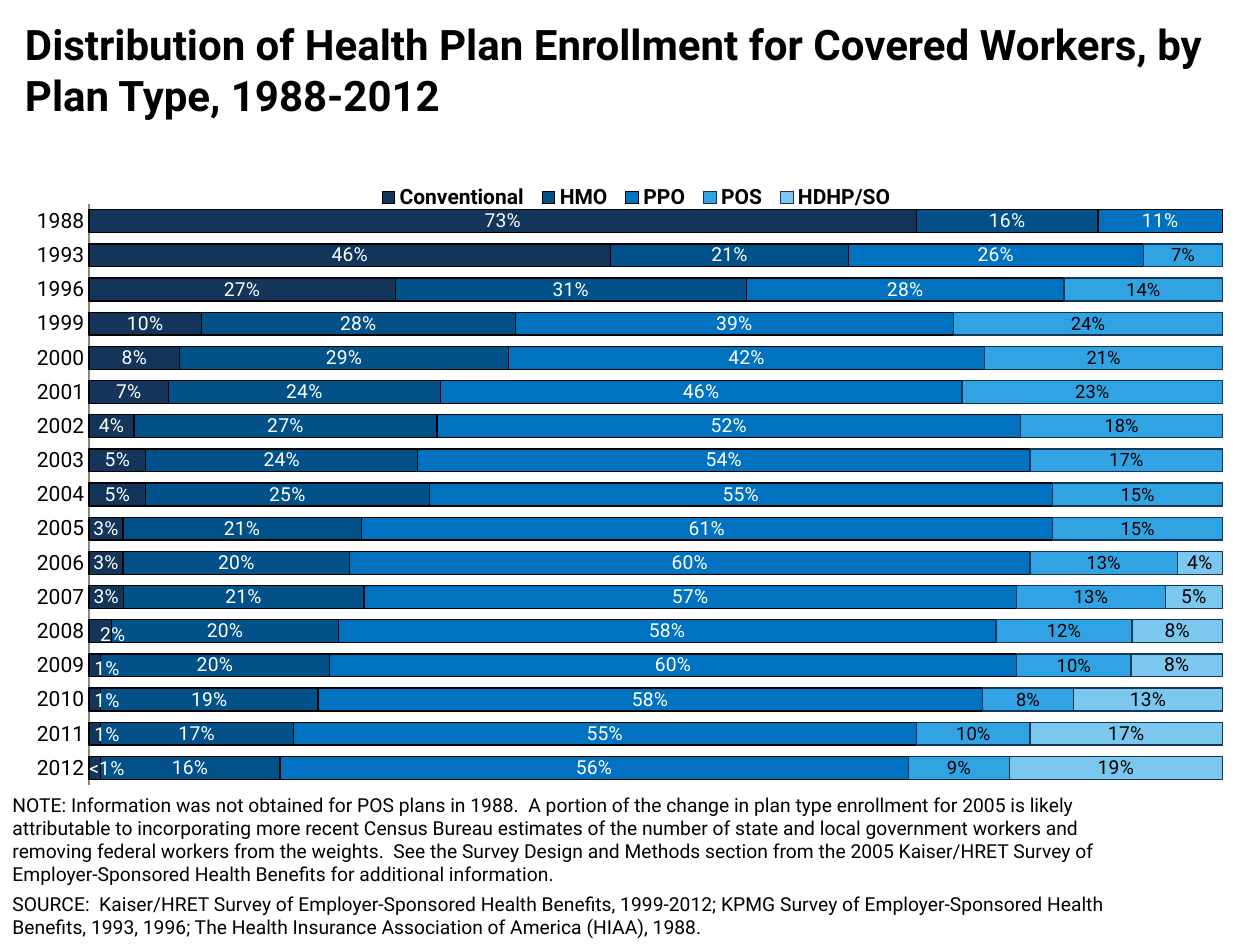
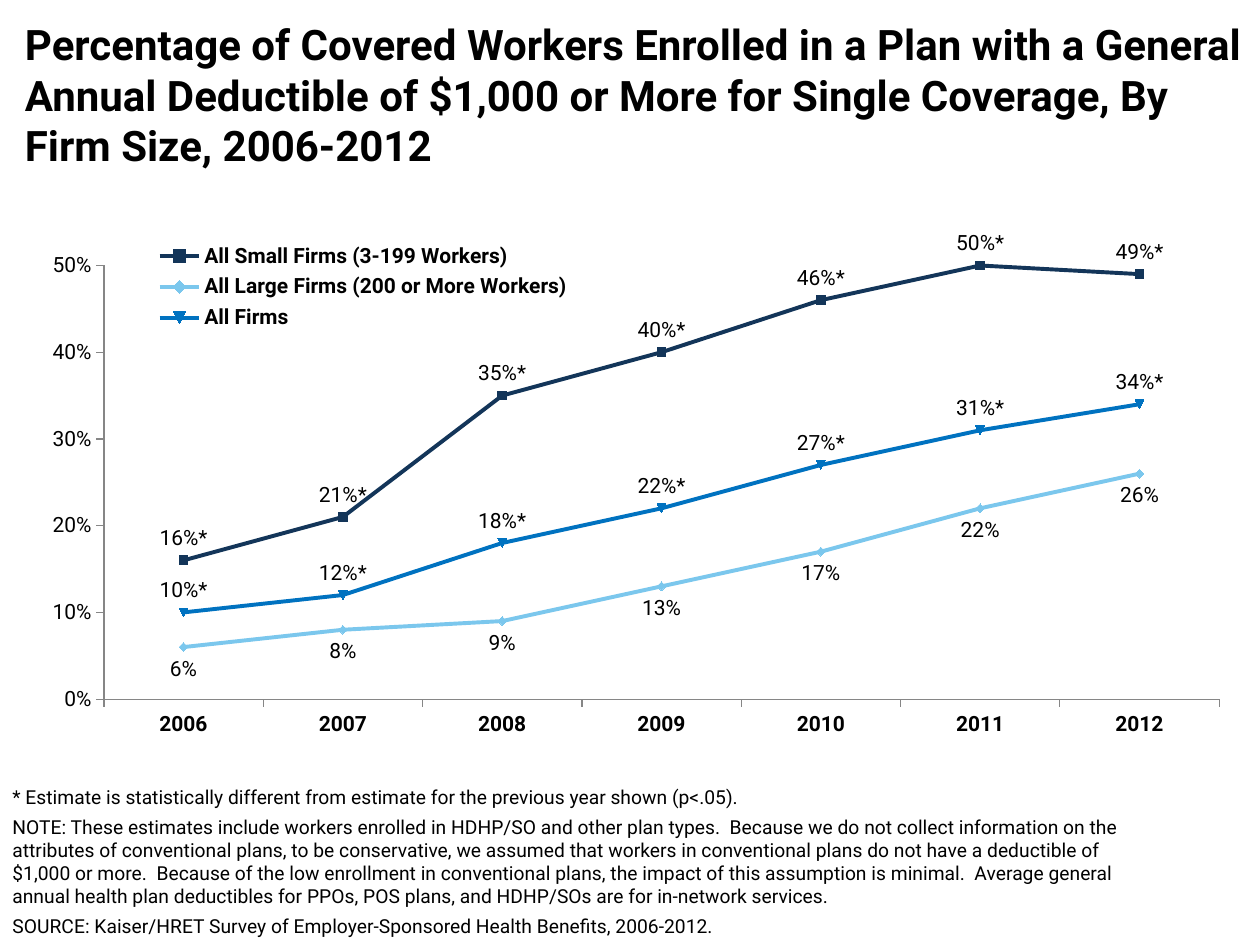
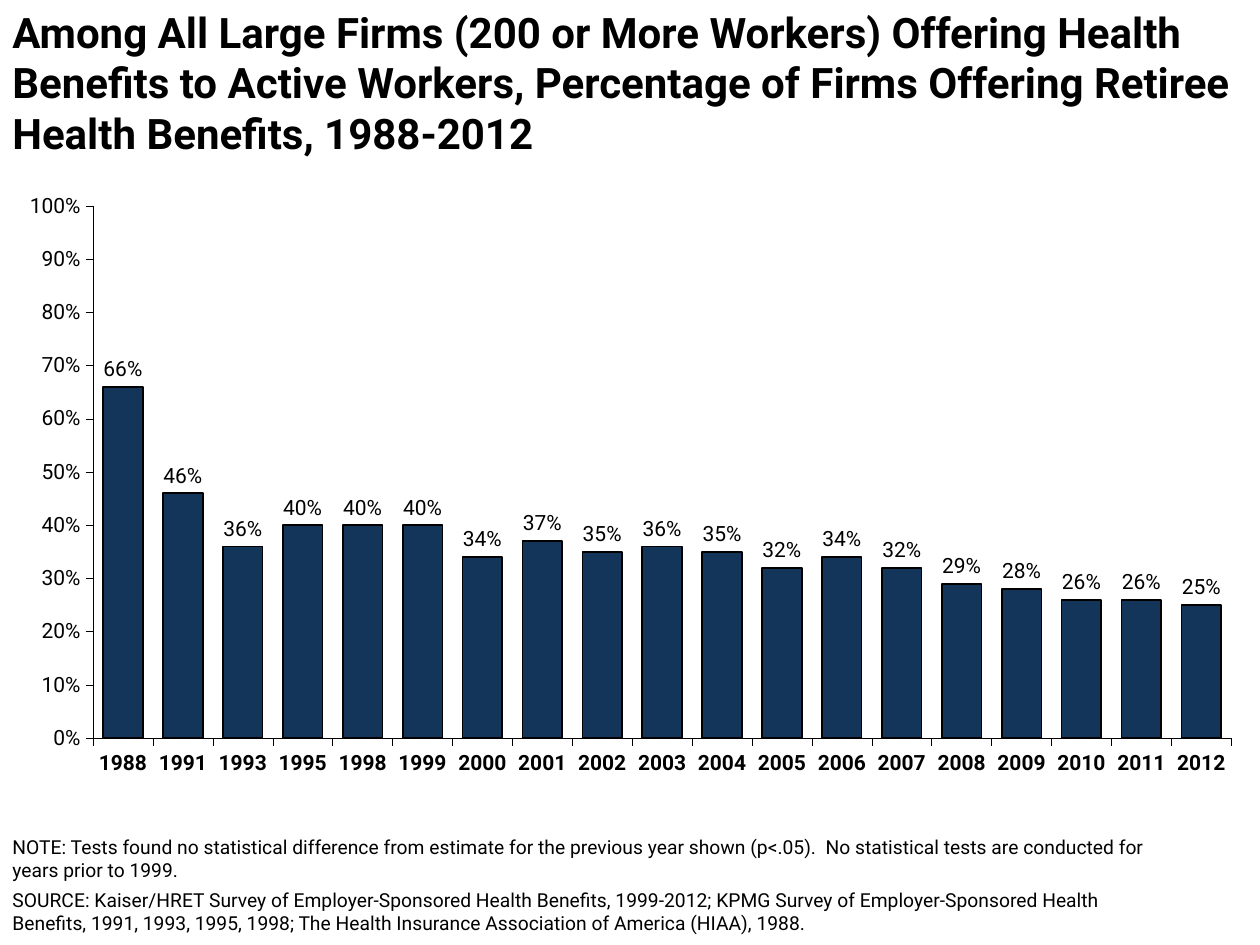
from pptx import Presentation
from pptx import util as u
from pptx.chart import data as chart_data
from pptx.dml import color
from pptx.enum import chart as ch, text
from pptx.oxml import parse_xml
from pptx.oxml import ns

COLORS = {"black": "000000", "white": "FFFFFF", "navy": "133559", "deep": "025189",
          "blue": "0072C0", "sky": "31A3E3", "pale": "7BC7ED", "axis": "868686"}
FONT = "Roboto"
PERCENT = "0%"
STARRED = '0%"*"'
INSIDE = {"layoutTarget": "inner", "xMode": "edge", "yMode": "edge"}
EDGE = {"xMode": "edge", "yMode": "edge"}

PLAN_YEARS = ["2012", "2011", "2010", "2009", "2008", "2007", "2006", "2005", "2004",
              "2003", "2002", "2001", "2000", "1999", "1996", "1993", "1988"]
PLANS = [
    ("Conventional", "navy", "black", "white", 11,
     [1, 1, 1, 1, 2, 3, 3, 3, 5, 5, 4, 7, 8, 10, 27, 46, 73]),
    ("HMO", "deep", "black", "white", 11,
     [16, 17, 19, 20, 20, 21, 20, 21, 25, 24, 27, 24, 29, 28, 31, 21, 16]),
    ("PPO", "blue", "black", "white", 11,
     [56, 55, 58, 60, 58, 57, 60, 61, 55, 54, 52, 46, 42, 39, 28, 26, 11]),
    ("POS", "sky", "navy", "black", 10.5,
     [9, 10, 8, 10, 12, 13, 13, 15, 15, 17, 18, 23, 21, 24, 14, 7, None]),
    ("HDHP/SO", "pale", "navy", "black", 11,
     [19, 17, 13, 8, 8, 5, 4] + [None] * 10),
]
DEDUCTIBLE_YEARS = ["2006", "2007", "2008", "2009", "2010", "2011", "2012"]
FIRM_SIZES = [
    ("All Small Firms (3-199 Workers)", "navy", STARRED, "ABOVE",
     [16, 21, 35, 40, 46, 50, 49]),
    ("All Large Firms (200 or More Workers)", "pale", PERCENT, "BELOW",
     [6, 8, 9, 13, 17, 22, 26]),
    ("All Firms", "blue", STARRED, "ABOVE", [10, 12, 18, 22, 27, 31, 34]),
]
RETIREE_YEARS = ["1988", "1991", "1993", "1995", "1998", "1999", "2000", "2001", "2002",
                 "2003", "2004", "2005", "2006", "2007", "2008", "2009", "2010", "2011",
                 "2012"]
RETIREE_SHARES = [66, 46, 36, 40, 40, 40, 34, 37, 35, 36, 35, 32, 34, 32, 29, 28, 26, 26, 25]


def rgb(name):
    """Return the named colour."""
    return color.RGBColor.from_string(COLORS[name])


def style_font(font, size, bold=False, shade="black", face=FONT):
    """Set face, size, weight and colour of a font."""
    font.name, font.size, font.bold = face, u.Pt(size), bold
    font.color.rgb = rgb(shade)


def style_line(line, shade, width):
    """Set colour and width of a line."""
    line.color.rgb = rgb(shade)
    line.width = u.Pt(width)


def set_layout(parent, index, **fields):
    """Give a chart part a manual layout as its child at index."""
    for old in parent.findall(ns.qn("c:layout")):
        parent.remove(old)
    entries = "".join(f'<c:{key} val="{value}"/>' for key, value in fields.items())
    parent.insert(index, parse_xml(
        f'<c:layout {ns.nsdecls("c")}><c:manualLayout>{entries}</c:manualLayout></c:layout>'))


def add_text(slide, box, paragraphs, size, bold=False, anchor="TOP", gap=0):
    """Add a wrapped text box with equal gaps between its paragraphs."""
    frame = slide.shapes.add_textbox(*map(u.Inches, box)).text_frame
    frame.word_wrap = True
    frame.vertical_anchor = text.MSO_ANCHOR[anchor]
    for number, words in enumerate(paragraphs):
        paragraph = frame.add_paragraph() if number else frame.paragraphs[0]
        paragraph.text = words
        style_font(paragraph.font, size, bold)
        if anchor == "BOTTOM":
            paragraph.space_after = u.Pt(gap)
        elif number:
            paragraph.space_before = u.Pt(gap)
    return frame


def add_title(slide, box, words):
    """Add the slide title."""
    add_text(slide, box, [words], 24, bold=True)


def add_notes(slide, box, paragraphs, anchor="BOTTOM"):
    """Add the notes and sources at the foot of the slide."""
    return add_text(slide, box, paragraphs, 11, anchor=anchor, gap=4)


def add_percent_chart(slide, box, kind, years, rows, plot, size=18, face=FONT, bold=None):
    """Add a chart of (name, percentages) rows with its plot area in place."""
    shares = chart_data.CategoryChartData(number_format=PERCENT)
    shares.categories = years
    for name, values in rows:
        shares.add_series(name, [None if v is None else v / 100 for v in values])
    chart = slide.shapes.add_chart(
        ch.XL_CHART_TYPE[kind], *map(u.Inches, box), shares).chart
    style_font(chart.font, size, bold, face=face)
    chart.has_title = chart.has_legend = False
    chart.value_axis.has_major_gridlines = False
    chart.plots[0].vary_by_categories = False
    plot_area = chart._chartSpace.chart.plotArea
    set_layout(plot_area, 0, **INSIDE, **dict(zip("xywh", plot)))
    return chart


def style_axis(axis, shade, width, tick="OUTSIDE", bold=False):
    """Set line, ticks and labels of an axis."""
    axis.major_tick_mark = ch.XL_TICK_MARK[tick]
    axis.minor_tick_mark = ch.XL_TICK_MARK.NONE
    style_line(axis.format.line, shade, width)
    style_font(axis.tick_labels.font, 12, bold)


def scale_axis(axis, top):
    """Run a percentage axis from zero to top in steps of ten."""
    axis.minimum_scale, axis.maximum_scale, axis.major_unit = 0, top, 0.1
    axis.tick_labels.number_format = PERCENT
    axis.tick_labels.number_format_is_linked = False


def add_legend(chart, place):
    """Add a bold legend at a place given in shares of the chart."""
    chart.has_legend = True
    legend = chart.legend
    legend.position = ch.XL_LEGEND_POSITION.TOP
    legend.include_in_layout = False
    style_font(legend.font, 12, bold=True)
    set_layout(legend._element, 1, **EDGE, **dict(zip("xywh", place)))


def label_values(series, size, shade="black", number_format=PERCENT, position=None):
    """Show the values of a series."""
    labels = series.data_labels
    labels.show_value = True
    labels.number_format = number_format
    labels.number_format_is_linked = False
    if position:
        labels.position = ch.XL_LABEL_POSITION[position]
    style_font(labels.font, size, shade=shade)


def shift_narrow_labels(series):
    """Move the labels of the narrowest bars to the right."""
    for index in range(5):
        label = series.points[index].data_label
        if index == 0:
            label.text_frame.text = "<1%"
            font = label.text_frame.paragraphs[0].font
        else:
            font = label.font
        style_font(font, 11, shade="white")
    for index, label in enumerate(series._element.xpath("c:dLbls/c:dLbl")):
        set_layout(label, 1, x=0.01, y=0.005 if index in (3, 4) else 0.002)


def add_plan_chart(slide, box):
    """Add the stacked bars of enrollment by plan type."""
    chart = add_percent_chart(slide, box, "BAR_STACKED_100", PLAN_YEARS,
                              [(plan[0], plan[-1]) for plan in PLANS],
                              (0.062, 0.087, 0.918, 0.892))
    bars = chart.plots[0]
    bars.gap_width, bars.overlap = 50, 100
    style_axis(chart.category_axis, "axis", 0.75, tick="NONE")
    chart.value_axis.visible = False
    for series, (_, fill, edge, shade, size, _) in zip(bars.series, PLANS):
        series.format.fill.solid()
        series.format.fill.fore_color.rgb = rgb(fill)
        style_line(series.format.line, edge, 0.75)
        label_values(series, size, shade)
    shift_narrow_labels(bars.series[0])
    add_legend(chart, (0.29, 0.057, 0.43, 0.04))


def add_deductible_chart(slide, box):
    """Add the lines of high-deductible enrollment by firm size."""
    chart = add_percent_chart(slide, box, "LINE_MARKERS", DEDUCTIBLE_YEARS,
                              [(firms[0], firms[-1]) for firms in FIRM_SIZES],
                              (0.06, 0.101, 0.924, 0.795))
    style_axis(chart.category_axis, "axis", 0.75, bold=True)
    style_axis(chart.value_axis, "axis", 0.75)
    scale_axis(chart.value_axis, 0.5)
    for series, (_, shade, number_format, position, _) in zip(chart.series, FIRM_SIZES):
        series.smooth = False
        style_line(series.format.line, shade, 2.25)
        marker = series.marker
        marker.style, marker.size = ch.XL_MARKER_STYLE.AUTOMATIC, 5
        marker.format.fill.solid()
        marker.format.fill.fore_color.rgb = rgb(shade)
        style_line(marker.format.line, shade, 0.75)
        label_values(series, 12, number_format=number_format, position=position)
    add_legend(chart, (0.095, 0.05, 0.36, 0.18))


def add_retiree_chart(slide, box):
    """Add the columns of large firms offering retiree benefits."""
    chart = add_percent_chart(slide, box, "COLUMN_CLUSTERED", RETIREE_YEARS,
                              [("Series 1", RETIREE_SHARES)],
                              (0.067, 0.028, 0.919, 0.882), 18.5, "Arial", True)
    columns = chart.plots[0]
    columns.gap_width, columns.overlap = 51, 1
    style_axis(chart.category_axis, "black", 0.23, bold=True)
    style_axis(chart.value_axis, "black", 0.23)
    scale_axis(chart.value_axis, 1)
    offering = columns.series[0]
    offering.format.fill.solid()
    offering.format.fill.fore_color.rgb = rgb("navy")
    style_line(offering.format.line, "black", 0.94)
    label_values(offering, 12, position="OUTSIDE_END")


def build_plan_slide(slide):
    """Build the slide on enrollment by plan type."""
    add_plan_chart(slide, (0.1, 1.17, 9.8, 5.17))
    add_notes(slide, (0, 6.9, 9.25, 0.6), [
        "NOTE: Information was not obtained for POS plans in 1988.  A portion of the change in "
        "plan type enrollment for 2005 is likely attributable to incorporating more recent "
        "Census Bureau estimates of the number of state and local government workers and "
        "removing federal workers from the weights.  See the Survey Design and Methods section "
        "from the 2005 Kaiser/HRET Survey of Employer-Sponsored Health Benefits for additional "
        "information.",
        "SOURCE:  Kaiser/HRET Survey of Employer-Sponsored Health Benefits, 1999-2012; KPMG "
        "Survey of Employer-Sponsored Health Benefits, 1993, 1996; The Health Insurance "
        "Association of America (HIAA), 1988."])
    add_title(slide, (0.1, 0.1, 9.8, 1),
              "Distribution of Health Plan Enrollment for Covered Workers, by Plan Type, "
              "1988-2012")


def build_deductible_slide(slide):
    """Build the slide on high deductibles by firm size."""
    add_deductible_chart(slide, (0.25, 1.67, 9.58, 4.33))
    add_notes(slide, (0, 6.17, 9.25, 1.32), [
        "* Estimate is statistically different from estimate for the previous year shown "
        "(p<.05).",
        "NOTE: These estimates include workers enrolled in HDHP/SO and other plan types.  "
        "Because we do not collect information on the attributes of conventional plans, to be "
        "conservative, we assumed that workers in conventional plans do not have a deductible "
        "of $1,000 or more.  Because of the low enrollment in conventional plans, the impact "
        "of this assumption is minimal.  Average general annual health plan deductibles for "
        "PPOs, POS plans, and HDHP/SOs are for in-network services.",
        "SOURCE: Kaiser/HRET Survey of Employer-Sponsored Health Benefits, 2006-2012."])
    add_title(slide, (0.1, 0.1, 9.9, 1),
              "Percentage of Covered Workers Enrolled in a Plan with a General Annual "
              "Deductible of $1,000 or More for Single Coverage, By Firm Size, 2006-2012")


def build_retiree_slide(slide):
    """Build the slide on retiree health benefits."""
    add_title(slide, (0, 0, 10, 1.08),
              "Among All Large Firms (200 or More Workers) Offering Health Benefits to Active "
              "Workers, Percentage of Firms Offering Retiree Health Benefits, 1988-2012")
    add_retiree_chart(slide, (0.08, 1.5, 9.83, 4.79))
    notes = add_notes(slide, (0, 6.58, 9.25, 0.9), [
        "NOTE: Tests found no statistical difference from estimate for the previous year shown "
        "(p<.05).  No statistical tests are conducted for years prior to 1999.",
        "SOURCE: Kaiser/HRET Survey of Employer-Sponsored Health Benefits, 1999-2012; KPMG "
        "Survey of Employer-Sponsored Health Benefits, 1991, 1993, 1995, 1998; The Health "
        "Insurance Association of America (HIAA), 1988."], anchor="TOP")
    notes.auto_size = text.MSO_AUTO_SIZE.SHAPE_TO_FIT_TEXT


def main():
    """Build and save the presentation."""
    deck = Presentation()
    deck.slide_width, deck.slide_height = u.Inches(10), u.Inches(7.5)
    for build in (build_plan_slide, build_deductible_slide, build_retiree_slide):
        build(deck.slides.add_slide(deck.slide_layouts[6]))
    deck.save("out.pptx")


if __name__ == "__main__":
    main()
